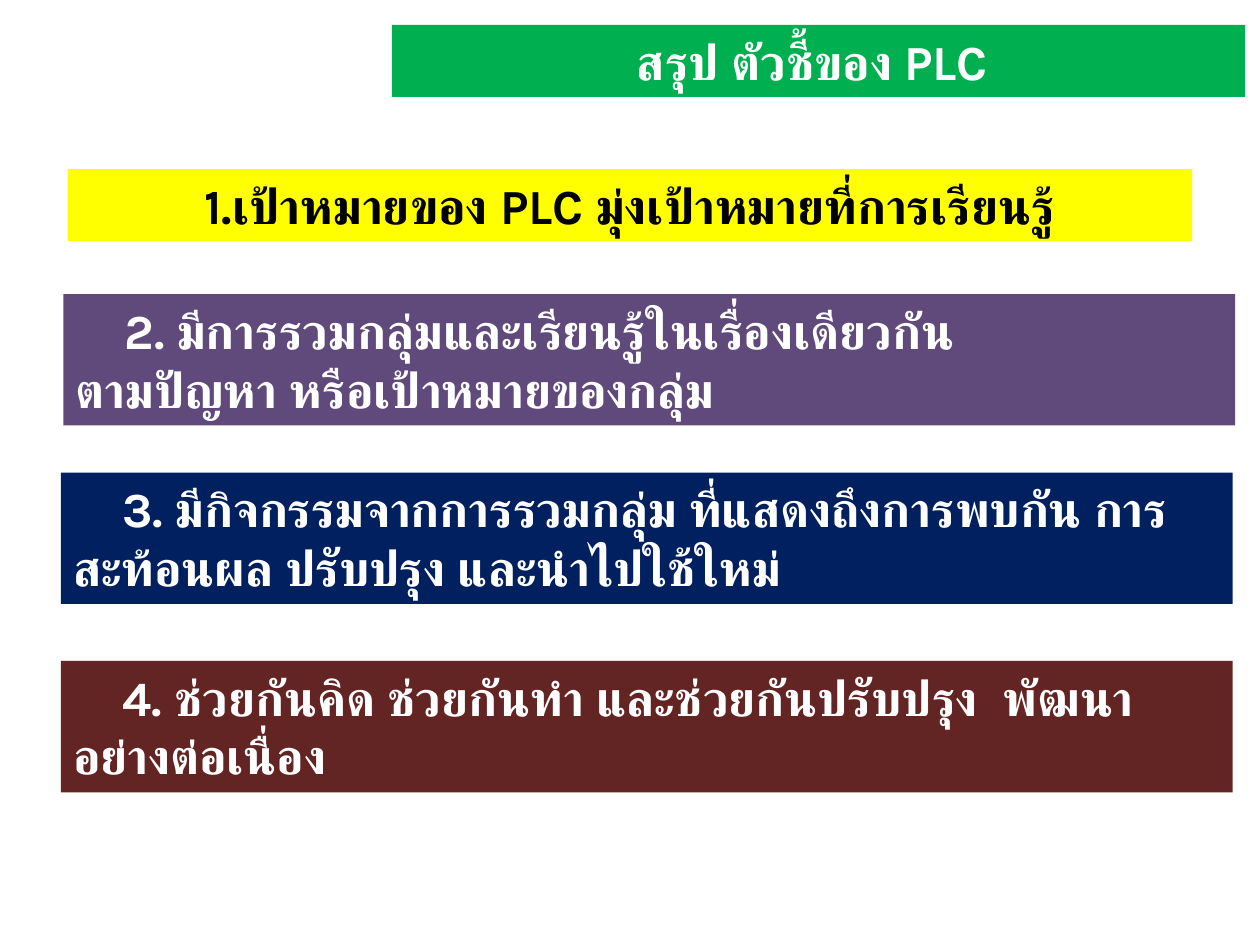
from lxml import etree
from pptx import Presentation
from pptx.dml.color import RGBColor
from pptx.enum.shapes import MSO_SHAPE
from pptx.enum.text import MSO_ANCHOR, PP_ALIGN
from pptx.oxml.ns import qn
from pptx.util import Pt

RECTANGLE = MSO_SHAPE.RECTANGLE
TOP = MSO_ANCHOR.TOP
LEFT = PP_ALIGN.LEFT
CENTER = PP_ALIGN.CENTER

FONT = "Karla"
WHITE = "FFFFFF"
BLACK = "000000"
ONE_LINE = 41.2
TWO_LINES = 75.1


def rgb(hex_string):
    return RGBColor.from_string(hex_string)


def write_text(box, text, color=WHITE, size=28, align=LEFT, indent=0):
    """Write one bold paragraph, using the same font for Latin and Thai."""
    frame = box.text_frame
    frame.word_wrap = True
    frame.vertical_anchor = TOP
    para = frame.paragraphs[0]
    para.alignment = align
    para.text = text
    if indent:
        para._p.get_or_add_pPr().set("indent", str(Pt(indent)))
    for span in para.runs:
        span.font.name = FONT
        span.font.size = Pt(size)
        span.font.bold = True
        span.font.color.rgb = rgb(color)
        complex_script = etree.SubElement(span.font._element, qn("a:cs"))
        complex_script.set("typeface", FONT)


def add_banner(page, left, top, width, height, fill, text, **text_format):
    box = page.shapes.add_shape(
        RECTANGLE, Pt(left), Pt(top), Pt(width), Pt(height))
    box.shadow.inherit = False
    box.fill.solid()
    box.fill.fore_color.rgb = rgb(fill)
    box.line.fill.background()
    write_text(box, text, **text_format)


def main():
    deck = Presentation()
    deck.slide_width, deck.slide_height = Pt(720), Pt(540)
    page = deck.slides.add_slide(deck.slide_layouts[6])

    add_banner(page, 224, 14.2, 487.5, ONE_LINE, "00B050",
               "สรุป ตัวชี้ของ PLC ", align=CENTER)
    add_banner(page, 38.6, 96.6, 642.6, ONE_LINE, "FFFF00",
               "1.เป้าหมายของ PLC มุ่งเป้าหมายที่การเรียนรู้",
               color=BLACK, align=CENTER)

    indicators = [
        (36.2, 168, "604A7B",
         "2. มีการรวมกลุ่มและเรียนรู้ในเรื่องเดียวกัน\vตามปัญหา หรือเป้าหมายของกลุ่ม"),
        (34.8, 270, "002060",
         "3. มีกิจกรรมจากการรวมกลุ่ม ที่แสดงถึงการพบกัน การสะท้อนผล ปรับปรุง และนำไปใช้ใหม่"),
        (34.8, 377.7, "632523",
         "4. ช่วยกันคิด ช่วยกันทำ และช่วยกันปรับปรุง  พัฒนาอย่างต่อเนื่อง"),
    ]
    for left, top, fill, text in indicators:
        add_banner(page, left, top, 669.6, TWO_LINES, fill, text, indent=28)

    deck.save("out.pptx")


if __name__ == "__main__":
    main()
